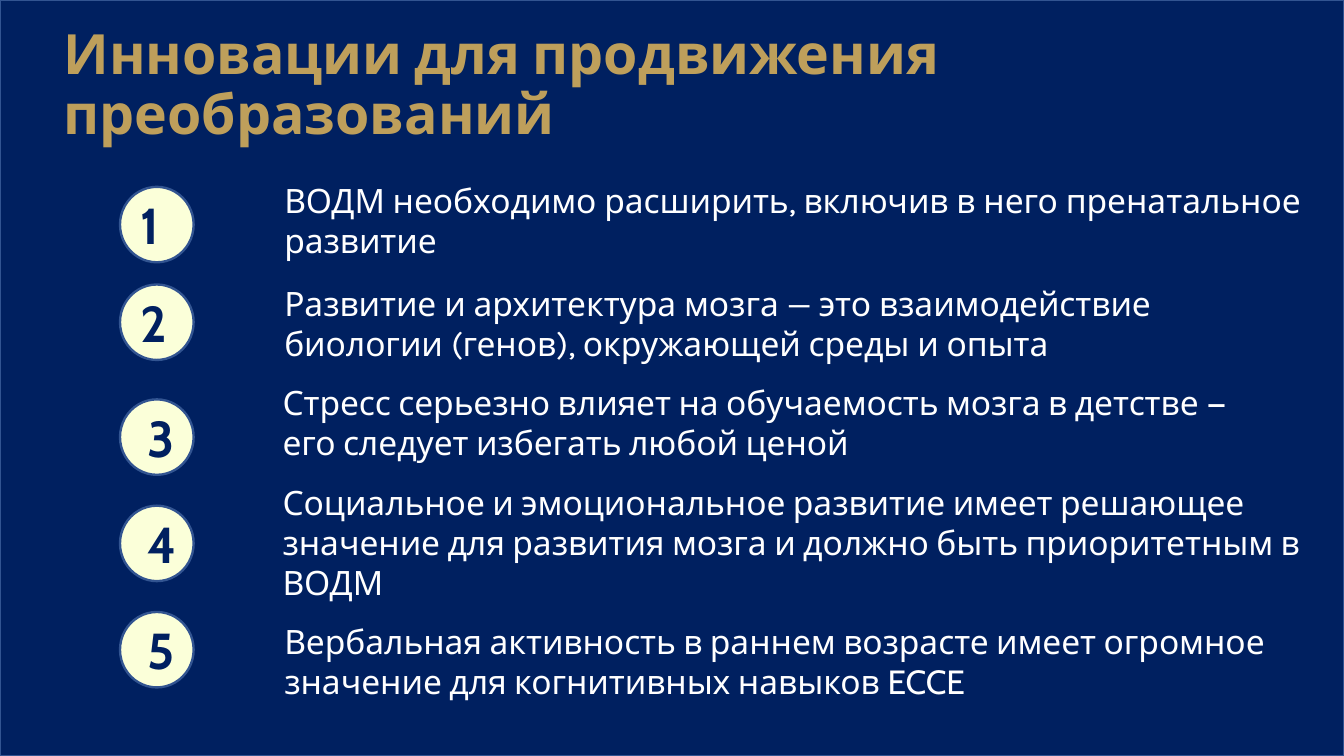
"""Build a slide with a title and five numbered statements."""
from dataclasses import dataclass

from pptx import Presentation
from pptx import util as u
from pptx.dml.color import RGBColor
from pptx.enum import shapes, text

WIDTH, HEIGHT = u.Inches(7.84), u.Inches(4.41)


@dataclass(frozen=True)
class Theme:
    navy: str = "002060"
    outline: str = "325491"
    gold: str = "BE9F5B"
    cream: str = "FBFFD9"
    white: str = "FFFFFF"
    heading: str = "Cabin"
    body: str = "Karla"
    title_size: float = 23.3
    number_size: float = 21.2
    text_size: float = 14.1


@dataclass(frozen=True)
class Box:
    left: float
    top: float
    width: float
    height: float

    def emu(self) -> tuple:
        across = [int(WIDTH * v / 100) for v in (self.left, self.width)]
        down = [int(HEIGHT * v / 100) for v in (self.top, self.height)]
        return across[0], down[0], across[1], down[1]


@dataclass(frozen=True)
class Statement:
    wording: str
    box: Box
    circle_top: float
    font: str = Theme.heading
    inset: float = 0.1


THEME = Theme()
STATEMENTS = [
    Statement("ВОДМ необходимо расширить, включив в него пренатальное развитие",
              Box(19.9, 22.68, 79.34, 13.15), 24.72, THEME.body, 0.06),
    Statement("Развитие и архитектура мозга — это взаимодействие биологии (генов), "
              "окружающей среды и опыта",
              Box(19.9, 36.28, 76.79, 13.15), 37.64, THEME.body, 0.06),
    Statement("Стресс серьезно влияет на обучаемость мозга в детстве — "
              "его следует избегать любой ценой",
              Box(19.77, 49.43, 73.85, 17.01), 52.83),
    Statement("Социальное и эмоциональное развитие имеет решающее значение "
              "для развития мозга и должно быть приоритетным в ВОДМ",
              Box(19.77, 62.59, 79.34, 22.45), 66.89),
    Statement("Вербальная активность в раннем возрасте имеет огромное значение "
              "для когнитивных навыков ECCE",
              Box(19.9, 80.95, 77.93, 17.01), 80.95),
]


def set_all(target, values: dict) -> None:
    for name, value in values.items():
        setattr(target, name, value)


def write(s, wording: str, font: str, size: float, color: str,
          bold: bool = False, **frame) -> None:
    tf = s.text_frame
    set_all(tf, {"word_wrap": True, "auto_size": text.MSO_AUTO_SIZE.NONE, **frame})
    p = tf.paragraphs[0]
    p.alignment = text.PP_ALIGN.LEFT
    r = p.add_run()
    r.text = wording
    set_all(r.font, {"name": font, "size": u.Pt(size), "bold": bold})
    r.font.color.rgb = RGBColor.from_string(color)


def add_filled(s, kind: shapes.MSO_SHAPE, box: Box, fill: str):
    sp = s.shapes.add_shape(kind, *box.emu())
    sp.shadow.inherit = False
    sp.fill.solid()
    sp.fill.fore_color.rgb = RGBColor.from_string(fill)
    sp.line.color.rgb = RGBColor.from_string(THEME.outline)
    sp.line.width = u.Pt(1)
    return sp


def add_title(s, wording: str) -> None:
    title = s.shapes.title
    place = Box(3.44, 4.08, 95.79, 14.74).emu()
    set_all(title, dict(zip(("left", "top", "width", "height"), place)))
    write(title, wording, THEME.heading, THEME.title_size, THEME.gold, True,
          vertical_anchor=text.MSO_ANCHOR.MIDDLE)
    title.text_frame.paragraphs[0].line_spacing = 0.9


def add_statement(s, number: int, item: Statement) -> None:
    circle = add_filled(s, shapes.MSO_SHAPE.OVAL,
                        Box(8.93, item.circle_top, 5.48, 9.98), THEME.cream)
    write(circle, str(number), THEME.heading, THEME.number_size, THEME.navy, True,
          vertical_anchor=text.MSO_ANCHOR.MIDDLE, margin_left=u.Inches(item.inset))
    write(s.shapes.add_textbox(*item.box.emu()), item.wording, item.font,
          THEME.text_size, THEME.white)


def main() -> None:
    prs = Presentation()
    set_all(prs, {"slide_width": WIDTH, "slide_height": HEIGHT})
    s = prs.slides.add_slide(prs.slide_layouts[5])
    backdrop = add_filled(s, shapes.MSO_SHAPE.RECTANGLE, Box(0, 0, 100, 100), THEME.navy)
    s.shapes.title.element.addprevious(backdrop.element)
    add_title(s, "Инновации для продвижения преобразований")
    for number, item in enumerate(STATEMENTS, 1):
        add_statement(s, number, item)
    prs.save("out.pptx")


if __name__ == "__main__":
    main()
